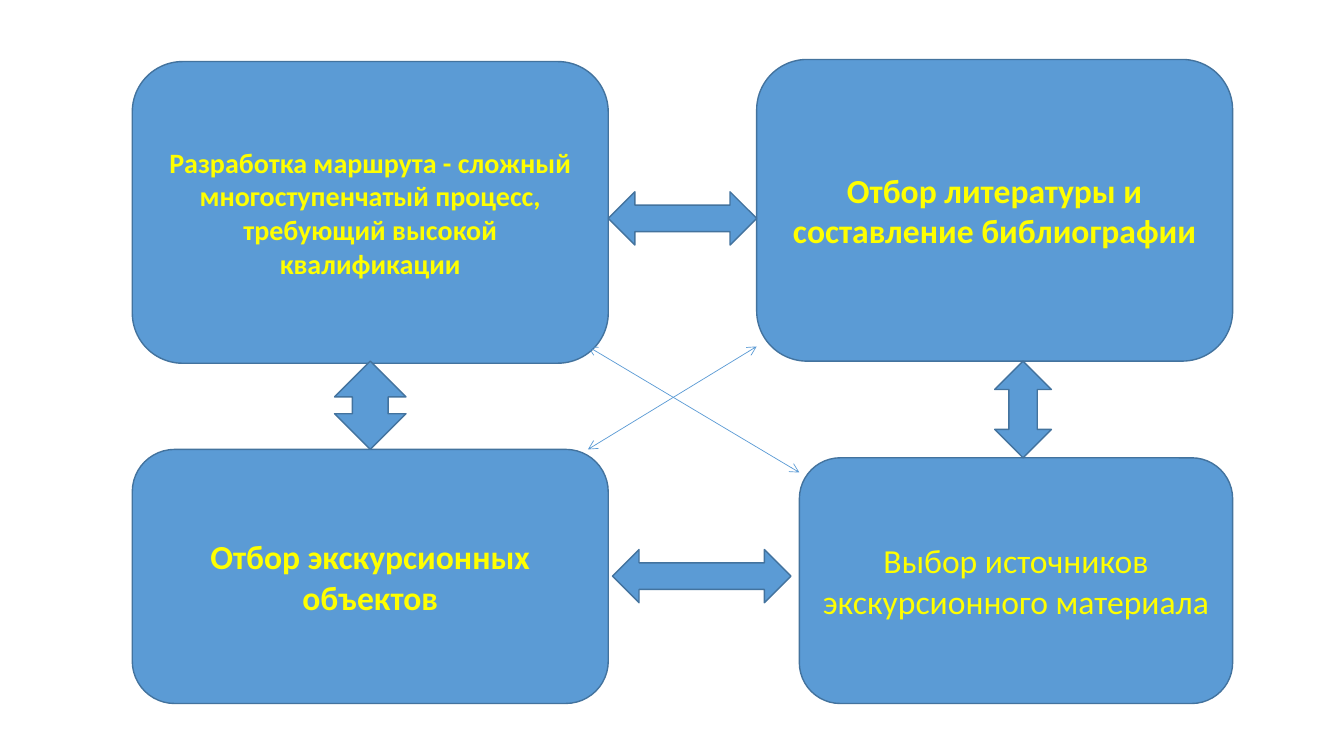
from dataclasses import dataclass

from lxml import etree
from pptx import Presentation
from pptx import util as u
from pptx.dml.color import RGBColor
from pptx.enum import shapes, text
from pptx.oxml import ns


@dataclass(frozen=True)
class Theme:
    font: str = "Calibri"
    fill: RGBColor = RGBColor(0x5B, 0x9B, 0xD5)
    outline: RGBColor = RGBColor(0x43, 0x73, 0x9E)
    text: RGBColor = RGBColor(0xFF, 0xFF, 0x00)
    body_size: float = 24
    small_size: float = 20
    outline_width: float = 1
    link_width: float = 0.5


class Diagram:
    def __init__(self, slide, theme):
        self.slide = slide
        self.theme = theme

    def block(self, kind, left, top, width, height):
        """Add a preset shape in the theme's fill and outline."""
        shape = self.slide.shapes.add_shape(
            kind, u.Pt(left), u.Pt(top), u.Pt(width), u.Pt(height))
        shape.shadow.inherit = False
        shape.fill.solid()
        shape.fill.fore_color.rgb = self.theme.fill
        shape.line.color.rgb = self.theme.outline
        shape.line.width = u.Pt(self.theme.outline_width)
        return shape

    def stage(self, wording, bounds, size, bold=True):
        """Add a rounded box with centred wording."""
        shape = self.block(shapes.MSO_SHAPE.ROUNDED_RECTANGLE, *bounds)
        frame = shape.text_frame
        frame.word_wrap = True
        frame.vertical_anchor = text.MSO_ANCHOR.MIDDLE
        frame.text = wording
        paragraph = frame.paragraphs[0]
        paragraph.alignment = text.PP_ALIGN.CENTER
        font = paragraph.runs[0].font
        font.name = self.theme.font
        font.size = u.Pt(size)
        font.bold = bold
        font.color.rgb = self.theme.text

    def diagonal_link(self, start, end):
        """Add a thin line with open arrowheads at both ends."""
        link = self.slide.shapes.add_connector(
            shapes.MSO_CONNECTOR.STRAIGHT, *map(u.Pt, (*start, *end)))
        link.line.color.rgb = self.theme.fill
        link.line.width = u.Pt(self.theme.link_width)
        properties = link.element.spPr
        outline = properties.find(ns.qn("a:ln"))
        for tag in ("a:headEnd", "a:tailEnd"):
            etree.SubElement(outline, ns.qn(tag), type="arrow")
        etree.SubElement(properties, ns.qn("a:effectLst"))


def main():
    presentation = Presentation()
    presentation.slide_width = u.Pt(960)
    presentation.slide_height = u.Pt(540)
    blank_layout = presentation.slide_layouts[6]
    theme = Theme()
    diagram = Diagram(presentation.slides.add_slide(blank_layout), theme)

    diagram.stage("Разработка маршрута - сложный многоступенчатый процесс, "
                  "требующий высокой квалификации",
                  (94.5, 44, 340, 215.5), theme.small_size)
    diagram.stage("Отбор литературы и составление библиографии",
                  (540.5, 42.5, 340, 215.5), theme.body_size)
    diagram.stage("Отбор экскурсионных объектов",
                  (94.5, 321, 340, 181.5), theme.body_size)
    diagram.stage("Выбор источников экскурсионного материала",
                  (571, 327, 309.5, 175.5), theme.body_size, bold=False)

    diagram.diagonal_link((420, 247.5), (571, 337.5))

    vertical = shapes.MSO_SHAPE.UP_DOWN_ARROW
    horizontal = shapes.MSO_SHAPE.LEFT_RIGHT_ARROW
    for kind, *bounds in (
        (vertical, 710.5, 258, 40.5, 69),
        (vertical, 239, 258, 51, 63),
        (horizontal, 434.5, 137, 106, 38),
        (horizontal, 437.5, 392.5, 127.5, 38),
    ):
        diagram.block(kind, *bounds)

    diagram.diagonal_link((540.5, 247.5), (420, 321))

    presentation.save("out.pptx")


if __name__ == "__main__":
    main()
